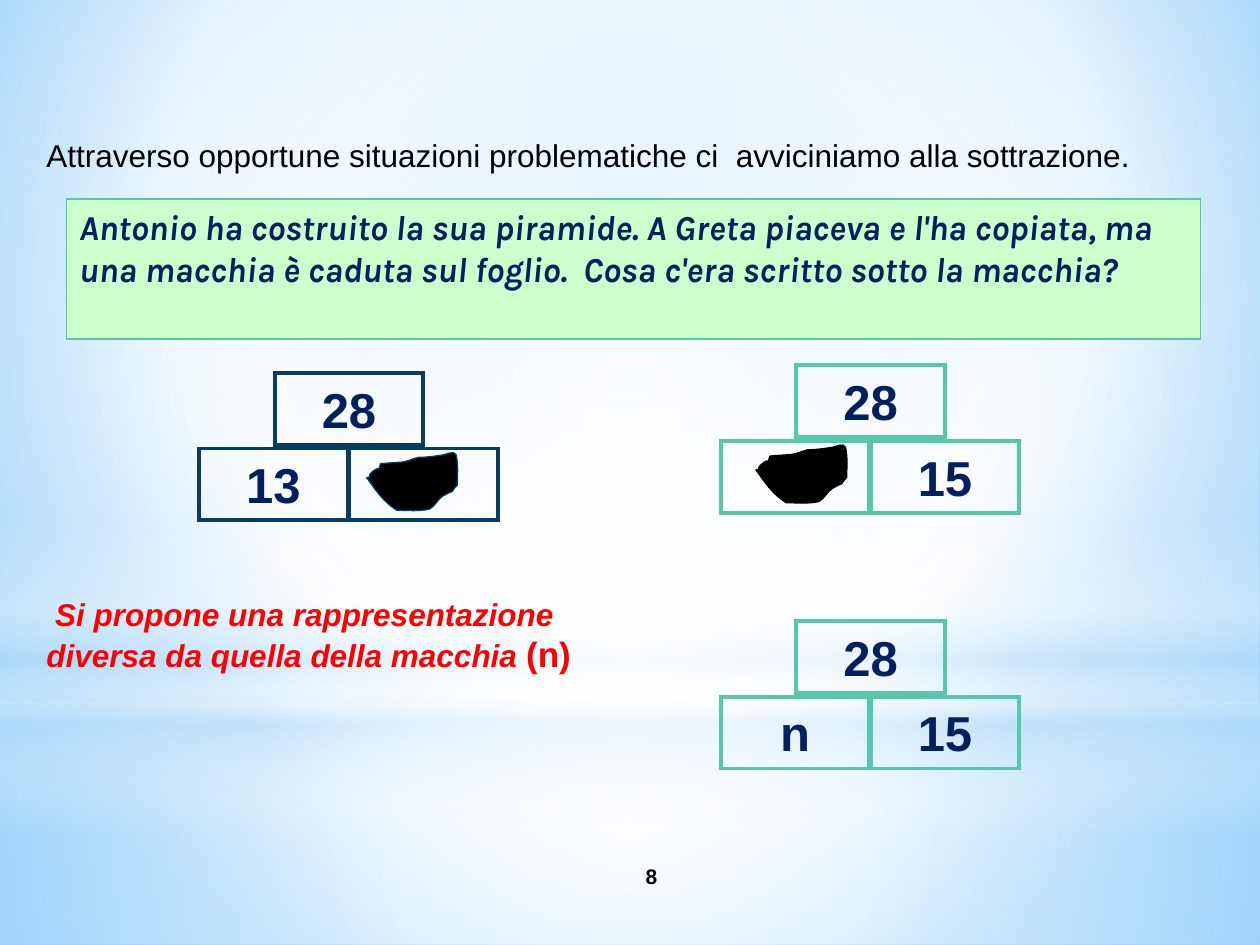
import lxml.etree
import pptx
import pptx.util
import pptx.dml.color
import pptx.enum.shapes
import pptx.enum.text
import pptx.oxml
import pptx.oxml.ns

Inches = pptx.util.Inches
Pt = pptx.util.Pt
qn = pptx.oxml.ns.qn
color = pptx.dml.color.RGBColor.from_string
SHAPES = pptx.enum.shapes.MSO_SHAPE
ALIGN = pptx.enum.text.PP_ALIGN
ANCHOR = pptx.enum.text.MSO_ANCHOR


def set_gradient(owner, element, stops, focus=None):
    owner.fill.background()
    stop_xml = "".join(
        f'<a:gs pos="{position * 1000}"><a:srgbClr val="{shade}">'
        f'<a:alpha val="{opacity * 1000}"/></a:srgbClr></a:gs>'
        for position, shade, opacity in stops)
    if focus:
        sides = " ".join(f'{side}="{value * 1000}"' for side, value in zip("ltrb", focus))
        direction = f'<a:path path="circle"><a:fillToRect {sides}/></a:path>'
    else:
        direction = '<a:lin ang="5400000" scaled="0"/>'
    gradient = pptx.oxml.parse_xml(
        f'<a:gradFill {pptx.oxml.ns.nsdecls("a")} rotWithShape="1">'
        f'<a:gsLst>{stop_xml}</a:gsLst>{direction}</a:gradFill>')
    empty_fill = element.find(".//" + qn("a:noFill"))
    empty_fill.getparent().replace(empty_fill, gradient)


def write_text(box, pieces, align=ALIGN.LEFT, anchor=ANCHOR.TOP):
    frame = box.text_frame
    frame.word_wrap = True
    frame.vertical_anchor = anchor
    para = frame.paragraphs[0]
    para.alignment = align
    for text, size, font, shade, bold, italic in pieces:
        span = para.add_run()
        span.text = text
        span.font.size = Pt(size)
        span.font.name = font
        span.font.color.rgb = color(shade)
        span.font.bold = bold
        span.font.italic = italic


deck = pptx.Presentation()
deck.slide_width = Inches(10)
deck.slide_height = Inches(7.5)
page = deck.slides.add_slide(deck.slide_layouts[6])

set_gradient(page.background, page.background._cSld,
             [(0, "9ED5FF", 100), (60, "FFFFFF", 100), (100, "5BB9FF", 100)],
             (20, 10, 20, 60))

center = (50, 50, 50, 50)
glows = [
    (SHAPES.RECTANGLE, 5.58, 1.92, center,
     [(0, "FFFFFF", 91), (37, "FFFFFF", 76), (100, "B4DCFA", 79)]),
    (SHAPES.RECTANGLE, 0, 5.58, center,
     [(0, "FFFFFF", 89), (48, "FFFFFF", 62), (100, "B4DCFA", 79)]),
    (SHAPES.RECTANGLE, 4.12, 2.5, None,
     [(0, "FFFFFF", 0), (29, "FFFFFF", 30), (45, "B4DCFA", 40),
      (55, "FFFFFF", 26), (65, "B4DCFA", 60), (100, "FFFFFF", 0)]),
    (SHAPES.OVAL, 1.75, 5.58, center,
     [(0, "FFFFFF", 100), (56, "FFFFFF", 0)]),
]
for kind, top, height, focus, stops in glows:
    glow = page.shapes.add_shape(kind, 0, Inches(top), Inches(10), Inches(height))
    glow.shadow.inherit = False
    set_gradient(glow, glow._element, stops, focus)
    glow.line.fill.background()

number = page.shapes.add_textbox(Inches(4.17), Inches(6.75), Inches(2), Inches(0.4))
write_text(number, [("8", 12, "Arial", "000000", True, False)], ALIGN.CENTER, ANCHOR.MIDDLE)

intro = page.shapes.add_textbox(Inches(0.27), Inches(1.03), Inches(9.73), Inches(0.4))
write_text(intro, [("Attraverso opportune situazioni problematiche ci  avviciniamo alla sottrazione.",
                    18, "Arial", "000000", False, False)])

problem = page.shapes.add_shape(SHAPES.RECTANGLE, Inches(0.53), Inches(1.58), Inches(9), Inches(1.11))
problem.shadow.inherit = False
problem.fill.solid()
problem.fill.fore_color.rgb = color("CCFFCC")
problem.line.color.rgb = color("56C7AA")
problem.line.width = Pt(0.75)
write_text(problem, [("Antonio ha costruito la sua piramide. A Greta piaceva e l'ha copiata, ma una "
                      "macchia è caduta sul foglio.  Cosa c'era scritto sotto la macchia?",
                      20, "Karla", "002060", True, True)])

remark = page.shapes.add_textbox(Inches(0.27), Inches(4.67), Inches(5), Inches(0.74))
write_text(remark, [
    (" ", 18, "Arial", "000000", False, True),
    ("Si propone una rappresentazione diversa da quella della macchia ", 18, "Arial", "FF0000", True, True),
    ("(n)", 20, "Arial", "FF0000", True, False),
])

stain_width, stain_height = 0.74, 0.49
stain_start = (0.01, 0.22)
stain_curves = [
    [(0.09, 0.33), (0.14, 0.41), (0.25, 0.48)],
    [(0.34, 0.48), (0.43, 0.49), (0.51, 0.47)],
    [(0.55, 0.45), (0.57, 0.40), (0.61, 0.37)],
    [(0.63, 0.36), (0.66, 0.34), (0.69, 0.33)],
    [(0.70, 0.31), (0.72, 0.29), (0.73, 0.28)],
    [(0.73, 0.20), (0.74, 0.12), (0.72, 0.04)],
    [(0.71, 0.00), (0.63, 0.04), (0.62, 0.04)],
    [(0.55, 0.05), (0.49, 0.06), (0.42, 0.06)],
    [(0.26, 0.11), (0.36, 0.09), (0.12, 0.11)],
    [(0.09, 0.21), (0.14, 0.11), (0.06, 0.17)],
    [(0.00, 0.22), (0.06, 0.22), (0.01, 0.22)],
]

cell_offsets = [(0, 0.6), (1.19, 0.6), (0.6, 0)]
pyramids = [
    (1.58, 2.96, "073C65", ("13", "", "28"), (2.9, 3.57, "073C65")),
    (5.72, 2.9, "56C7AA", ("", "15", "28"), (5.99, 3.51, "000000")),
    (5.72, 4.93, "56C7AA", ("n", "15", "28"), None),
]
for left, top, outline, labels, stain_place in pyramids:
    pyramid = page.shapes.add_group_shape()
    for (across, down), label in zip(cell_offsets, labels):
        cell = pyramid.shapes.add_shape(SHAPES.RECTANGLE, Inches(left + across), Inches(top + down),
                                        Inches(1.18), Inches(0.57))
        cell.shadow.inherit = False
        cell.fill.background()
        cell.line.color.rgb = color(outline)
        cell.line.width = Pt(2.25)
        corner = lxml.etree.SubElement(cell._element.spPr.find(qn("a:ln")), qn("a:miter"))
        corner.set("lim", "800000")
        if label:
            write_text(cell, [(label, 28, "Arial", "002060", True, False)], ALIGN.CENTER)
    if stain_place:
        stain_left, stain_top, stain_outline = stain_place
        builder = pyramid.shapes.build_freeform(Inches(stain_start[0]), Inches(stain_start[1]))
        builder.add_line_segments([(Inches(x), Inches(y)) for *handles, (x, y) in stain_curves])
        stain = builder.convert_to_shape(Inches(stain_left), Inches(stain_top))
        stain.left, stain.top = Inches(stain_left), Inches(stain_top)
        stain.width, stain.height = Inches(stain_width), Inches(stain_height)
        contour = stain._element.find(".//" + qn("a:pathLst"))[0]
        contour.set("w", str(Inches(stain_width)))
        contour.set("h", str(Inches(stain_height)))
        for piece in list(contour):
            contour.remove(piece)
        for tag, points in [("a:moveTo", [stain_start])] + [("a:cubicBezTo", c) for c in stain_curves]:
            piece = lxml.etree.SubElement(contour, qn(tag))
            for x, y in points:
                point = lxml.etree.SubElement(piece, qn("a:pt"))
                point.set("x", str(Inches(x)))
                point.set("y", str(Inches(y)))
        lxml.etree.SubElement(contour, qn("a:close"))
        stain.shadow.inherit = False
        stain.fill.solid()
        stain.fill.fore_color.rgb = color("000000")
        stain.line.color.rgb = color(stain_outline)
        stain.line.width = Pt(0.75)

deck.save("out.pptx")
